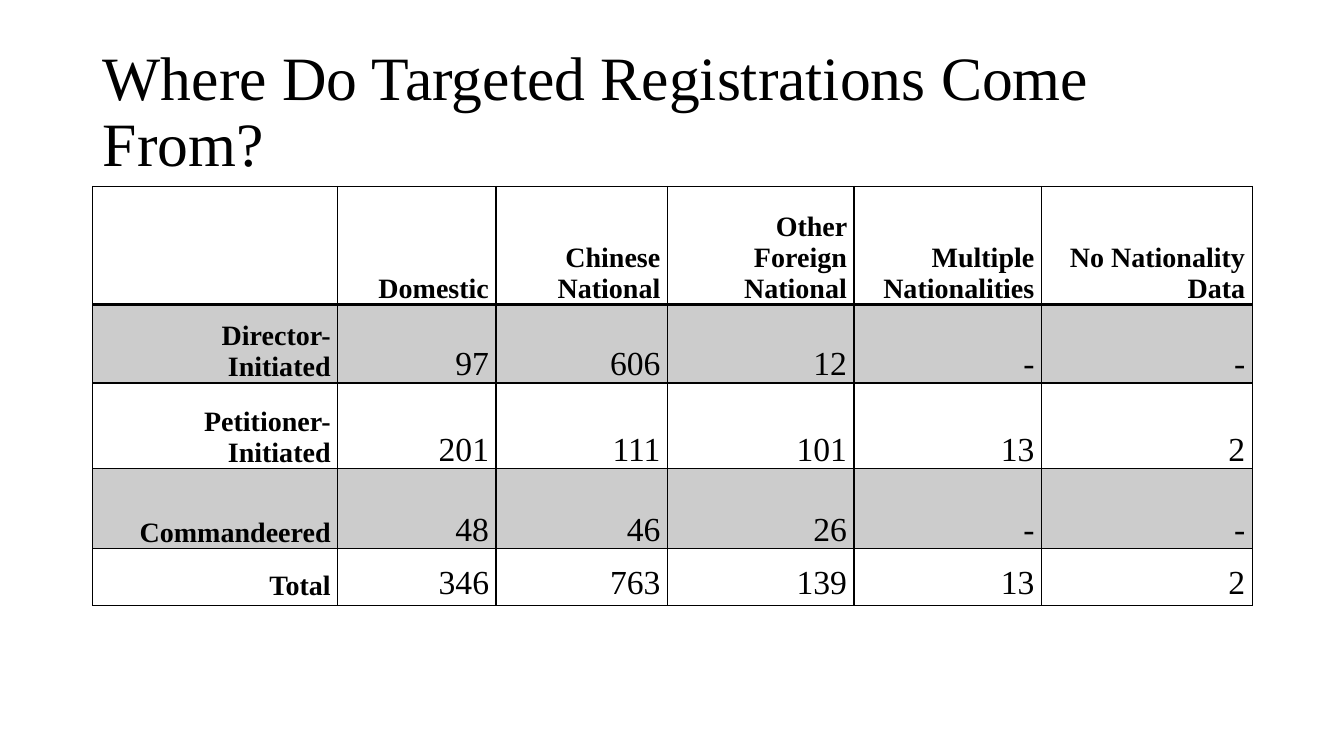
from dataclasses import dataclass

from lxml.etree import SubElement
from pptx import Presentation
from pptx.dml.color import RGBColor
from pptx.enum.text import MSO_ANCHOR, MSO_AUTO_SIZE, PP_ALIGN
from pptx.oxml.ns import qn
from pptx.util import Inches, Pt


@dataclass(frozen=True)
class Theme:
    font: str = "Times New Roman"
    ink: str = "000000"
    band: str = "CCCCCC"
    title_size: int = 44
    label_size: int = 20
    value_size: int = 24
    rule: float = 1
    header_rule: float = 2


@dataclass(frozen=True)
class Heading:
    text: str
    width: float
    indent: float = 0


@dataclass(frozen=True)
class Origin:
    label: str
    counts: tuple[str, ...]
    height: float
    shaded: bool = False
    pad: float = 0


THEME = Theme()
FIRST_LINE = 0.25
LEFT, TABLE_TOP = 0.92, 1.85
HEADER_HEIGHT = 1.17

HEADINGS = (
    Heading("", 2.43),
    Heading("Domestic", 1.57),
    Heading("Chinese National", 1.7),
    Heading("Other Foreign National", 1.85, FIRST_LINE),
    Heading("Multiple\nNationalities", 1.86),
    Heading("No Nationality Data", 2.09),
)
ORIGINS = (
    Origin("Director-Initiated", ("97", "606", "12", "-", "-"), 0.78, shaded=True),
    Origin("Petitioner-Initiated", ("201", "111", "101", "13", "2"), 0.85),
    Origin("Commandeered", ("48", "46", "26", "-", "-"), 0.79, shaded=True),
    Origin("Total", ("346", "763", "139", "13", "2"), 0.57, pad=0.04),
)


def write(frame, text: str, *, size: int, bold: bool = False,
          align=PP_ALIGN.LEFT, spacing: float = 1.0, indent: float = 0) -> None:
    """Fill a text frame, one paragraph per line of text."""
    frame.text = text
    for paragraph in frame.paragraphs:
        paragraph.alignment = align
        paragraph.line_spacing = spacing
        if indent:
            properties = paragraph._p.get_or_add_pPr()
            properties.set("marL", "0")
            properties.set("indent", str(Inches(indent)))
        font = paragraph.font
        for target in (font, *(run.font for run in paragraph.runs)):
            target.name = THEME.font
            target.size = Pt(size)
            target.bold = bold
            target.color.rgb = RGBColor.from_string(THEME.ink)


def set_borders(cell, top: float, bottom: float) -> None:
    properties = cell._tc.get_or_add_tcPr()
    widths = {"lnL": THEME.rule, "lnR": THEME.rule, "lnT": top, "lnB": bottom}
    for position, (side, width) in enumerate(widths.items()):
        line = SubElement(properties, qn(f"a:{side}"), w=str(Pt(width)))
        fill = SubElement(line, qn("a:solidFill"))
        SubElement(fill, qn("a:srgbClr"), val=THEME.ink)
        properties.insert(position, line)


def format_cell(cell, shaded: bool = False, pad: float = 0,
                top: float = THEME.rule, bottom: float = THEME.rule) -> None:
    cell.vertical_anchor = MSO_ANCHOR.BOTTOM
    cell.margin_left = cell.margin_right = Inches(0.07)
    cell.margin_top = cell.margin_bottom = Inches(pad)
    if shaded:
        cell.fill.solid()
        cell.fill.fore_color.rgb = RGBColor.from_string(THEME.band)
    else:
        cell.fill.background()
    set_borders(cell, top, bottom)


def add_title(slide, text: str) -> None:
    title = slide.shapes.title
    title.left, title.top = Inches(LEFT), Inches(0.4)
    title.width, title.height = Inches(11.5), Inches(1.45)
    frame = title.text_frame
    frame.auto_size = MSO_AUTO_SIZE.NONE
    frame.vertical_anchor = MSO_ANCHOR.MIDDLE
    write(frame, text, size=THEME.title_size, spacing=0.9)


def add_origin_table(slide) -> None:
    heights = [HEADER_HEIGHT, *(origin.height for origin in ORIGINS)]
    table = slide.shapes.add_table(
        len(heights), len(HEADINGS), Inches(LEFT), Inches(TABLE_TOP),
        Inches(sum(heading.width for heading in HEADINGS)), Inches(sum(heights)),
    ).table
    table.horz_banding = False
    for row, height in zip(table.rows, heights):
        row.height = Inches(height)

    for column, heading in enumerate(HEADINGS):
        table.columns[column].width = Inches(heading.width)
        cell = table.cell(0, column)
        format_cell(cell, bottom=THEME.header_rule)
        write(cell.text_frame, heading.text, size=THEME.label_size, bold=True,
              align=PP_ALIGN.RIGHT, indent=heading.indent)

    for row, origin in enumerate(ORIGINS, start=1):
        top = THEME.header_rule if row == 1 else THEME.rule
        for column, text in enumerate((origin.label, *origin.counts)):
            is_label = column == 0
            cell = table.cell(row, column)
            format_cell(cell, origin.shaded, origin.pad, top=top)
            write(cell.text_frame, text, bold=is_label,
                  size=THEME.label_size if is_label else THEME.value_size,
                  align=PP_ALIGN.RIGHT, indent=FIRST_LINE)


def main() -> None:
    presentation = Presentation()
    presentation.slide_width = Inches(13.33)
    presentation.slide_height = Inches(7.5)
    title_only = presentation.slide_layouts.get_by_name("Title Only")
    slide = presentation.slides.add_slide(title_only)
    add_title(slide, "Where Do Targeted Registrations Come From?")
    add_origin_table(slide)
    presentation.save("out.pptx")


if __name__ == "__main__":
    main()
